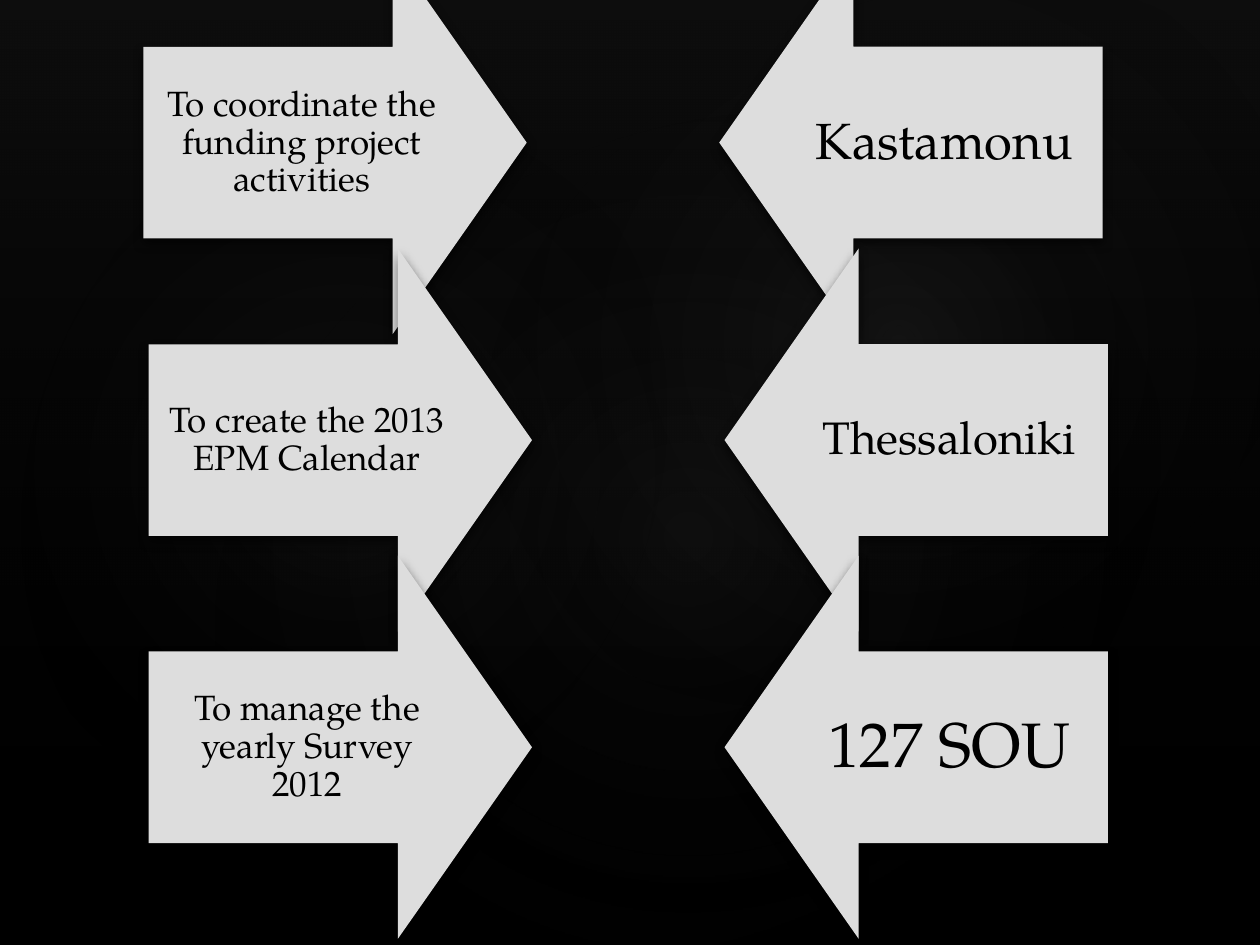
"""Build a slide of three rows of facing arrows on a softly lit black background."""
import pptx
import pptx.dml.color
import pptx.enum.shapes
import pptx.enum.text
import pptx.oxml
import pptx.oxml.ns
import pptx.util

Pt = pptx.util.Pt
SHAPE = pptx.enum.shapes.MSO_SHAPE
NS = pptx.oxml.ns.nsdecls("a")
LINEAR = '<a:lin ang="5400000" scaled="0"/>'
RADIAL = '<a:path path="circle"><a:fillToRect l="50000" t="50000" r="50000" b="50000"/></a:path>'


def rgb(color):
    return pptx.dml.color.RGBColor.from_string(color)


def add_glow(shapes, kind, box, rotation, stops, direction):
    s = shapes.add_shape(kind, *[Pt(v) for v in box])
    s.rotation = rotation
    s.shadow.inherit = False
    s.line.fill.background()
    s.fill.gradient()
    stop_xml = "".join(
        f'<a:gs pos="{pos * 1000}"><a:srgbClr val="{color}">'
        f'<a:alpha val="{alpha * 1000}"/></a:srgbClr></a:gs>'
        for pos, color, alpha in stops)
    grad = pptx.oxml.parse_xml(
        f'<a:gradFill {NS} rotWithShape="1"><a:gsLst>{stop_xml}</a:gsLst>{direction}</a:gradFill>')
    spPr = s._element.spPr
    spPr.replace(spPr.find(pptx.oxml.ns.qn("a:gradFill")), grad)


prs = pptx.Presentation()
prs.slide_width, prs.slide_height = Pt(720), Pt(540)
slide = prs.slides.add_slide(prs.slide_layouts[6])
slide.background.fill.solid()
slide.background.fill.fore_color.rgb = rgb("000000")

add_glow(slide.shapes, SHAPE.RECTANGLE, (0, 0, 720, 540), 0,
         [(0, "262626", 36), (100, "000000", 10)], LINEAR)
glows = [
    ((108, 82, 570, 449), 328.7, 7),
    ((-21.6, 92, 436, 353), 294.3, 8),
    ((258, 9.4, 510.5, 374.4), 328.7, 8),
]
for box, rotation, alpha in glows:
    add_glow(slide.shapes, SHAPE.OVAL, box, rotation,
             [(0, "949494", alpha), (58, "000000", 0)], RADIAL)

ARROW = 219
TEXT_W, TEXT_H = 181, ARROW / 2
RIGHT_OFFSET = 329
rows = [
    (82, -28, "To coordinate the funding project activities", "Kastamonu", 29, 16.5),
    (85, 142, "To create the 2013 EPM Calendar", "Thessaloniki", 26, 14.5),
    (85, 317.5, "To manage the yearly Survey 2012", "127 SOU", 36, 20),
]
for left, top, goal, result, result_size, result_inset in rows:
    right = left + RIGHT_OFFSET
    sides = [
        (left, 270, left, goal, 20, 11.5),
        (right, 90, right + ARROW - TEXT_W, result, result_size, result_inset),
    ]
    for x, rotation, text_x, text, size, inset in sides:
        s = slide.shapes.add_shape(SHAPE.DOWN_ARROW, Pt(x), Pt(top), Pt(ARROW), Pt(ARROW))
        s.rotation = rotation
        s.adjustments[0], s.adjustments[1] = 0.5, 0.35
        s.fill.solid()
        s.fill.fore_color.rgb = rgb("DDDDDD")
        s.line.fill.background()
        s.shadow.inherit = False
        effects = s._element.spPr.find(pptx.oxml.ns.qn("a:effectLst"))
        effects.append(pptx.oxml.parse_xml(
            f'<a:outerShdw {NS} blurRad="{Pt(6)}" dist="{Pt(3)}" dir="5400000" rotWithShape="0">'
            '<a:srgbClr val="000000"><a:alpha val="60000"/></a:srgbClr></a:outerShdw>'))

        s = slide.shapes.add_textbox(Pt(text_x), Pt(top + ARROW / 4), Pt(TEXT_W), Pt(TEXT_H))
        tf = s.text_frame
        tf.word_wrap = True
        tf.vertical_anchor = pptx.enum.text.MSO_ANCHOR.MIDDLE
        tf.margin_left = tf.margin_right = tf.margin_top = tf.margin_bottom = Pt(inset)
        p = tf.paragraphs[0]
        p.alignment = pptx.enum.text.PP_ALIGN.CENTER
        p.line_spacing = 0.9
        r = p.add_run()
        r.text = text
        r.font.size = Pt(size)
        r.font.name = "TeX Gyre Pagella"
        r.font.color.rgb = rgb("000000")

prs.save("out.pptx")
